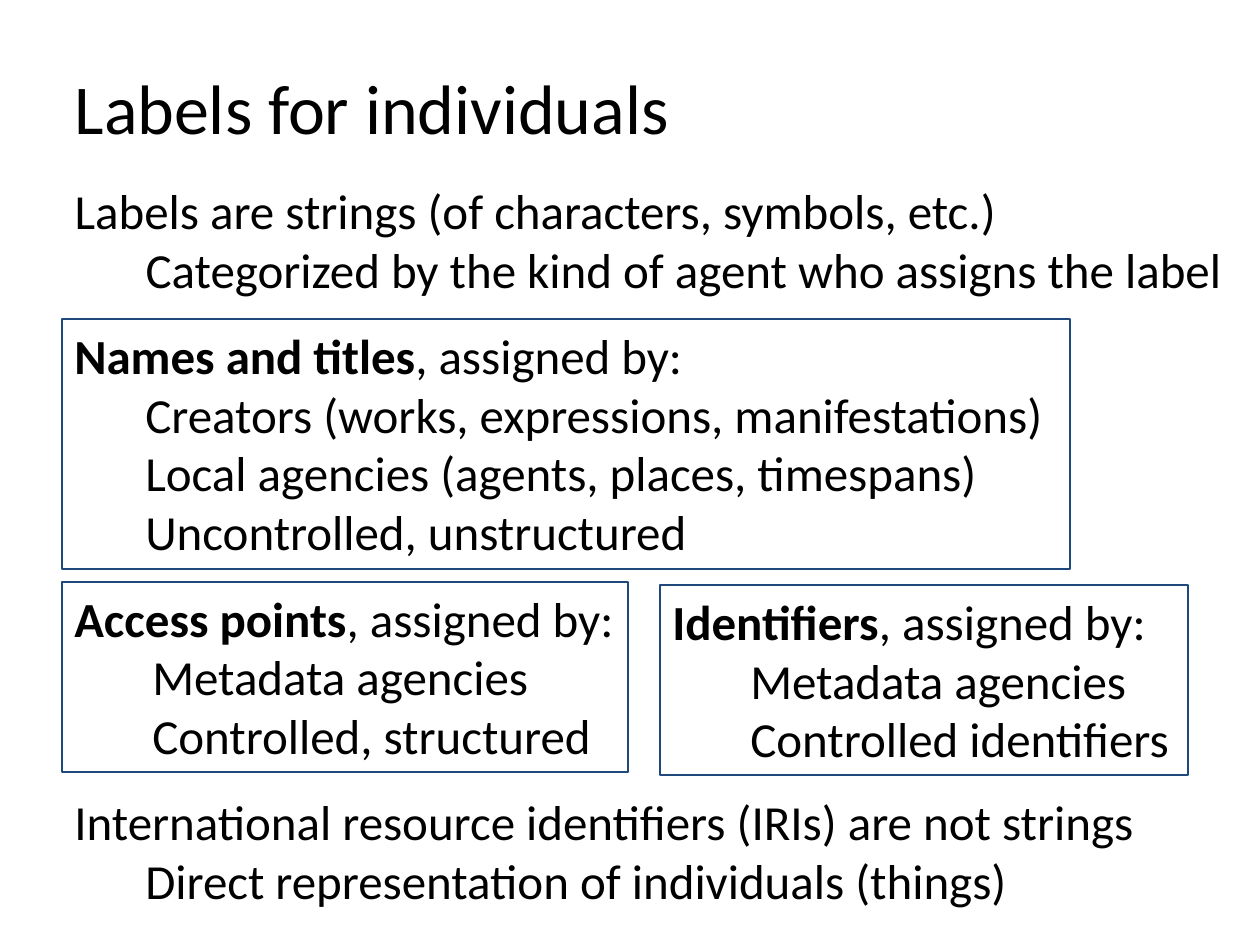
from dataclasses import dataclass

from lxml.etree import SubElement
from pptx import Presentation
from pptx.dml.color import RGBColor
from pptx.enum.shapes import MSO_SHAPE
from pptx.enum.text import MSO_ANCHOR, MSO_AUTO_SIZE, PP_ALIGN
from pptx.oxml.ns import qn
from pptx.util import Emu, Pt

PX = 914400 / 126


def px(n):
    return Emu(round(n * PX))


@dataclass(frozen=True)
class Theme:
    font: str = "Calibri"
    ink: RGBColor = RGBColor(0, 0, 0)
    border: RGBColor = RGBColor(0x1F, 0x49, 0x7D)
    title_size: int = 40
    body_size: int = 28
    border_width: float = 0.75


def write(p, text, *, font, size, color, bold=False):
    r = p.add_run()
    r.text = text
    r.font.name, r.font.size, r.font.bold = font, Pt(size), bold
    r.font.color.rgb = color


class Deck:
    def __init__(self, theme):
        self.theme = theme
        self.prs = Presentation()
        self.prs.slide_width, self.prs.slide_height = px(1260), px(945)
        self.s = self.prs.slides.add_slide(self.prs.slide_layouts[1])

    def place(self, sp, box):
        sp.left, sp.top, sp.width, sp.height = map(px, box)

    def fill_text(self, sp, lines, size, indent=0):
        t = self.theme
        tf = sp.text_frame
        tf.word_wrap = False
        tf.auto_size = MSO_AUTO_SIZE.SHAPE_TO_FIT_TEXT
        tf.vertical_anchor = MSO_ANCHOR.TOP
        for i, runs in enumerate(lines):
            p = tf.add_paragraph() if i else tf.paragraphs[0]
            p.alignment = PP_ALIGN.LEFT
            p.space_before = Pt(0)
            p.level = min(i, 1)
            pPr = p._p.get_or_add_pPr()
            pPr.set("marL", str(px(indent if i else 0)))
            pPr.set("indent", "0")
            SubElement(pPr, qn("a:buNone"))
            for text, bold in runs:
                write(p, text, font=t.font, size=size, color=t.ink, bold=bold)

    def title(self, text, box):
        sp = self.s.shapes.title
        self.place(sp, box)
        self.fill_text(sp, [[(text, False)]], self.theme.title_size)

    def statement(self, sp, head, detail, box):
        self.place(sp, box)
        lines = [[(head, False)], [(detail, False)]]
        self.fill_text(sp, lines, self.theme.body_size, indent=71)

    def body(self, head, detail, box):
        self.statement(self.s.placeholders[1], head, detail, box)

    def note(self, head, detail, box):
        sp = self.s.shapes.add_textbox(*map(px, box))
        self.statement(sp, head, detail, box)

    def label_box(self, kind, items, box, indent):
        sp = self.s.shapes.add_shape(MSO_SHAPE.RECTANGLE, *map(px, box))
        sp.shadow.inherit = False
        sp.fill.background()
        sp.line.color.rgb = self.theme.border
        sp.line.width = Pt(self.theme.border_width)
        lines = [[(kind, True), (", assigned by:", False)]]
        lines += [[(item, False)] for item in items]
        self.fill_text(sp, lines, self.theme.body_size, indent)


def main():
    deck = Deck(Theme())
    deck.title("Labels for individuals", (62, 58, 625, 97))
    deck.body("Labels are strings (of characters, symbols, etc.)",
              "Categorized by the kind of agent who assigns the label",
              (62, 174, 1184, 131))
    deck.label_box("Names and titles",
                   ["Creators (works, expressions, manifestations)",
                    "Local agencies (agents, places, timespans)",
                    "Uncontrolled, unstructured"],
                   (62, 319, 1008, 250), indent=71)
    deck.label_box("Access points",
                   ["Metadata agencies", "Controlled, structured"],
                   (62, 582, 566, 190), indent=78)
    deck.label_box("Identifiers",
                   ["Metadata agencies", "Controlled identifiers"],
                   (660, 585, 528, 190), indent=78)
    deck.note("International resource identifiers (IRIs) are not strings",
              "Direct representation of individuals (things)",
              (62, 785, 1096, 131))
    deck.prs.save("out.pptx")


if __name__ == "__main__":
    main()
